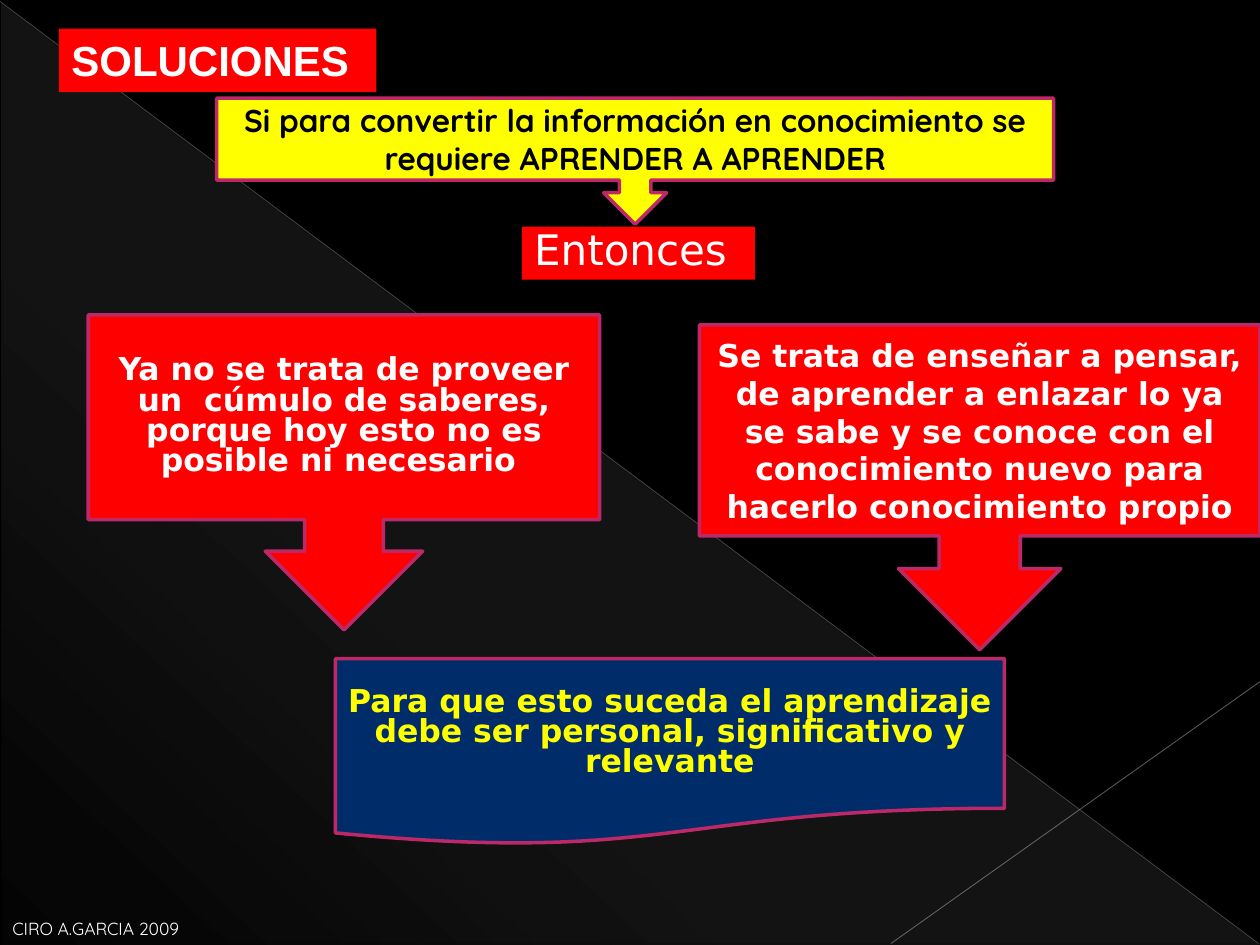
from dataclasses import dataclass
from lxml.etree import SubElement
from pptx import Presentation
from pptx.dml.color import RGBColor
from pptx.enum.shapes import MSO_CONNECTOR, MSO_SHAPE
from pptx.enum.text import MSO_ANCHOR, PP_ALIGN
from pptx.oxml import parse_xml
from pptx.oxml.ns import nsdecls, qn
from pptx.util import Cm, Pt

RED, WHITE, BLACK, YELLOW, NAVY, PINK = (
    "FF0000", "FFFFFF", "000000", "FFFF00", "002D6A", "BD2968")
SANS = "DejaVu Sans"


@dataclass
class Box:
    text: str
    at: tuple[float, float, float, float]
    kind: MSO_SHAPE = MSO_SHAPE.RECTANGLE
    fill: str | None = RED
    edge: str | None = None
    ink: str = WHITE
    font: str = SANS
    size: int = 18
    bold: bool = True
    space: float = 1.0
    align: PP_ALIGN = PP_ALIGN.CENTER
    anchor: MSO_ANCHOR = MSO_ANCHOR.MIDDLE


@dataclass
class Ray:
    start: tuple[float, float]
    end: tuple[float, float]
    color: str
    width: float
    alpha: int


def paint(color, code: str) -> None:
    color.rgb = RGBColor.from_string(code)


def assign(target, values: dict) -> None:
    for name, value in values.items():
        setattr(target, name, value)


def draw_box(slide, box: Box) -> None:
    place = [Cm(n) for n in box.at]
    if box.fill:
        shape = slide.shapes.add_shape(box.kind, *place)
        shape.shadow.inherit = False
        shape.fill.solid()
        paint(shape.fill.fore_color, box.fill)
        if box.edge:
            paint(shape.line.color, box.edge)
            shape.line.width = Pt(2)
        else:
            shape.line.fill.background()
    else:
        shape = slide.shapes.add_textbox(*place)
    frame = shape.text_frame
    assign(frame, {"word_wrap": True, "vertical_anchor": box.anchor})
    para = frame.paragraphs[0]
    assign(para, {"alignment": box.align, "line_spacing": box.space})
    run = para.add_run()
    run.text = box.text
    assign(run.font, {"name": box.font, "size": Pt(box.size), "bold": box.bold})
    paint(run.font.color, box.ink)


def draw_ray(slide, ray: Ray) -> None:
    ends = [Cm(n) for n in ray.start + ray.end]
    line = slide.shapes.add_connector(MSO_CONNECTOR.STRAIGHT, *ends)
    paint(line.line.color, ray.color)
    line.line.width = Pt(ray.width)
    props = line._element.spPr
    tint = props.find(".//" + qn("a:srgbClr"))
    SubElement(tint, qn("a:alpha"), val=str(ray.alpha * 1000))
    SubElement(props, qn("a:effectLst"))


def draw_shade(slide, at: tuple, stops: list[tuple[int, int]], angle: int) -> None:
    shape = slide.shapes.add_shape(MSO_SHAPE.RIGHT_TRIANGLE, *[Cm(n) for n in at])
    shape.shadow.inherit = False
    shape.line.fill.background()
    marks = "".join(
        f'<a:gs pos="{pos * 1000}"><a:srgbClr val="D2D2D2">'
        f'<a:alpha val="{alpha * 1000}"/></a:srgbClr></a:gs>'
        for pos, alpha in stops)
    grad = parse_xml(
        f'<a:gradFill {nsdecls("a")} rotWithShape="1"><a:gsLst>{marks}</a:gsLst>'
        f'<a:lin ang="{angle * 60000}" scaled="0"/></a:gradFill>')
    shape._element.spPr.find(qn("a:prstGeom")).addnext(grad)


RAYS = [
    Ray((0, 0.03), (25.37, 19.02), "BFBFBF", 0.39, 35),
    Ray((25.4, 13.74), (17.96, 19.02), "C6C6C6", 0.47, 45),
]

CALL = MSO_SHAPE.DOWN_ARROW_CALLOUT
LEFT, TOP = PP_ALIGN.LEFT, MSO_ANCHOR.TOP

BOXES = [
    Box("CIRO A.GARCIA 2009", (0, 18.21, 5.92, 0.84), fill=None,
        font="Quicksand", size=10, bold=False, align=LEFT,
        anchor=MSO_ANCHOR.BOTTOM),
    Box("SOLUCIONES", (1.19, 0.58, 6.4, 1.28), font="Arial", size=24,
        align=LEFT, anchor=TOP),
    Box("Si para convertir la información en conocimiento se requiere "
        "APRENDER A APRENDER", (4.37, 1.98, 16.87, 2.54), CALL, YELLOW, PINK,
        BLACK, "Quicksand"),
    Box("Entonces", (10.52, 4.57, 4.7, 1.07), size=24, bold=False, space=0.8,
        align=LEFT, anchor=TOP),
    Box("Se trata de enseñar a pensar, de aprender a enlazar lo ya se sabe y "
        "se conoce con el conocimiento nuevo para hacerlo conocimiento propio",
        (14.1, 6.55, 11.3, 6.55), CALL, edge=PINK),
    Box("Ya no se trata de proveer un  cúmulo de saberes, porque hoy esto no "
        "es posible ni necesario ", (1.78, 6.35, 10.31, 6.35), CALL,
        edge=PINK, space=0.8),
    Box("Para que esto suceda el aprendizaje debe ser personal, significativo "
        "y relevante", (6.76, 13.28, 13.49, 3.76),
        MSO_SHAPE.FLOWCHART_DOCUMENT, NAVY, PINK, YELLOW, space=0.8),
]


def main() -> None:
    deck = Presentation()
    assign(deck, {"slide_width": Cm(25.4), "slide_height": Cm(19.05)})
    slide = deck.slides.add_slide(deck.slide_layouts[6])
    back = slide.background.fill
    back.solid()
    paint(back.fore_color, BLACK)
    draw_shade(slide, (0.03, 0.05, 25.37, 19), [(0, 10), (70, 8), (100, 1)], 133)
    for ray in RAYS:
        draw_ray(slide, ray)
    for box in BOXES:
        draw_box(slide, box)
    deck.save("out.pptx")


if __name__ == "__main__":
    main()
